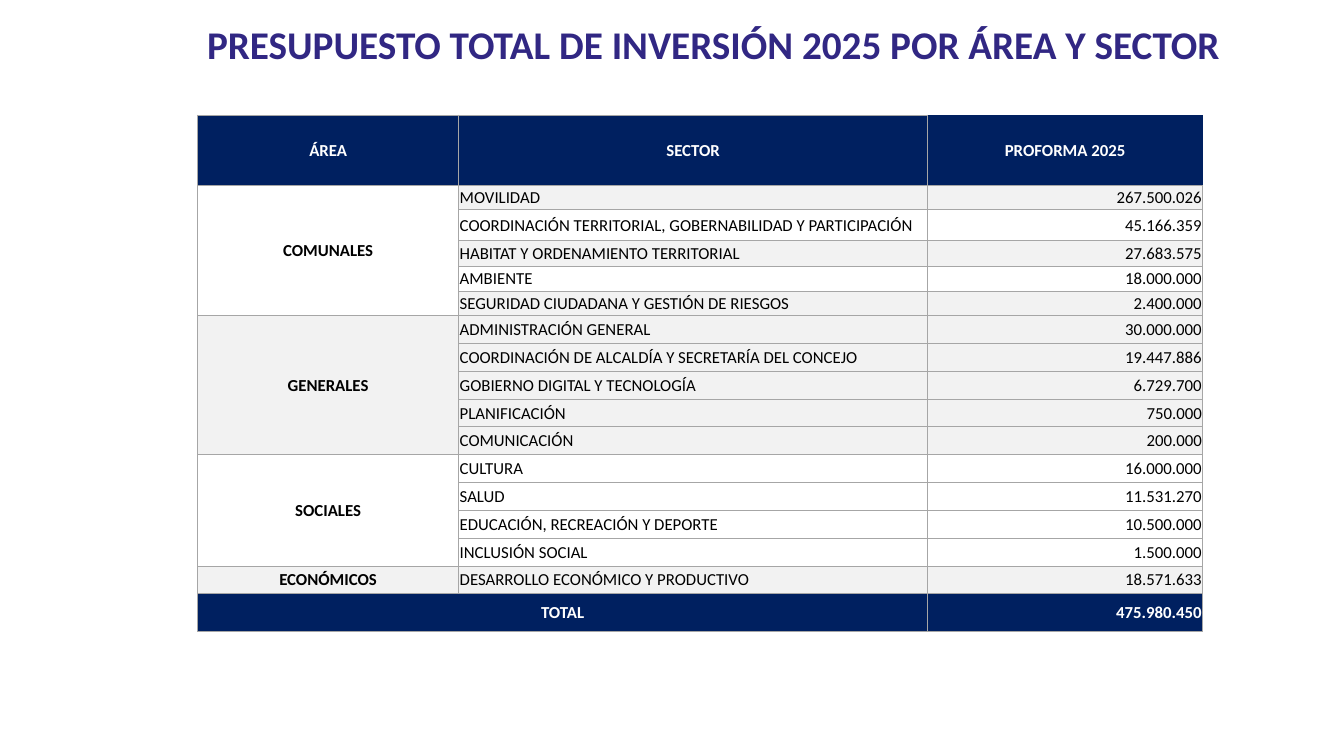
from dataclasses import dataclass

from lxml.etree import SubElement
from pptx import Presentation
from pptx.dml.color import RGBColor
from pptx.enum.text import MSO_ANCHOR, PP_ALIGN
from pptx.oxml.ns import qn
from pptx.slide import Slide
from pptx.table import Table, _Cell
from pptx.text.text import TextFrame
from pptx.util import Inches, Pt

PURPLE = RGBColor(0x31, 0x27, 0x83)
NAVY = RGBColor(0x00, 0x20, 0x60)
WHITE = RGBColor(0xFF, 0xFF, 0xFF)
BLACK = RGBColor(0x00, 0x00, 0x00)
LIGHT_GRAY = RGBColor(0xF2, 0xF2, 0xF2)
BORDER_GRAY = RGBColor(0xA6, 0xA6, 0xA6)

FONT = "Calibri"
COLUMN_WIDTHS = (2.59, 4.65, 2.73)
HEADER_HEIGHT = 0.7
TOTAL_HEIGHT = 0.37
REGULAR_HEIGHT = 2.76 / 10


@dataclass(frozen=True)
class Sector:
    name: str
    amount: str
    fill: RGBColor
    height: float = REGULAR_HEIGHT


@dataclass(frozen=True)
class Area:
    name: str
    fill: RGBColor
    sectors: tuple[Sector, ...]


AREAS = (
    Area("COMUNALES", WHITE, (
        Sector("MOVILIDAD", "267.500.026", LIGHT_GRAY, 0.24),
        Sector("COORDINACIÓN TERRITORIAL, GOBERNABILIDAD Y PARTICIPACIÓN", "45.166.359", WHITE, 0.3),
        Sector("HABITAT Y ORDENAMIENTO TERRITORIAL", "27.683.575", LIGHT_GRAY, 0.26),
        Sector("AMBIENTE", "18.000.000", WHITE, 0.25),
        Sector("SEGURIDAD CIUDADANA Y GESTIÓN DE RIESGOS", "2.400.000", LIGHT_GRAY, 0.24),
    )),
    Area("GENERALES", LIGHT_GRAY, (
        Sector("ADMINISTRACIÓN GENERAL", "30.000.000", LIGHT_GRAY),
        Sector("COORDINACIÓN DE ALCALDÍA Y SECRETARÍA DEL CONCEJO", "19.447.886", LIGHT_GRAY),
        Sector("GOBIERNO DIGITAL Y TECNOLOGÍA", "6.729.700", LIGHT_GRAY),
        Sector("PLANIFICACIÓN", "750.000", LIGHT_GRAY),
        Sector("COMUNICACIÓN", "200.000", LIGHT_GRAY),
    )),
    Area("SOCIALES", WHITE, (
        Sector("CULTURA", "16.000.000", WHITE),
        Sector("SALUD", "11.531.270", WHITE),
        Sector("EDUCACIÓN, RECREACIÓN Y DEPORTE", "10.500.000", WHITE),
        Sector("INCLUSIÓN SOCIAL", "1.500.000", WHITE),
    )),
    Area("ECONÓMICOS", LIGHT_GRAY, (
        Sector("DESARROLLO ECONÓMICO Y PRODUCTIVO", "18.571.633", LIGHT_GRAY),
    )),
)


def write_text(frame: TextFrame, text: str, *, size: float = 12, color: RGBColor = BLACK,
               bold: bool = False, align: PP_ALIGN = PP_ALIGN.LEFT, line_spacing: float = 1.0) -> None:
    para = frame.paragraphs[0]
    para.alignment = align
    para.line_spacing = line_spacing
    span = para.add_run()
    span.text = text
    span.font.name = FONT
    span.font.size = Pt(size)
    span.font.bold = bold
    span.font.color.rgb = color


def add_borders(cell: _Cell, sides: str) -> None:
    properties = cell._tc.get_or_add_tcPr()
    for side in "LRTB":
        visible = side in sides
        line = SubElement(properties, qn(f"a:ln{side}"), w=str(Pt(0.5) if visible else 0))
        if visible:
            fill = SubElement(line, qn("a:solidFill"))
            SubElement(fill, qn("a:srgbClr"), val=str(BORDER_GRAY))
        else:
            SubElement(line, qn("a:noFill"))


def style_cell(cell: _Cell, fill: RGBColor, sides: str = "LRTB") -> None:
    add_borders(cell, sides)
    cell.fill.solid()
    cell.fill.fore_color.rgb = fill
    cell.vertical_anchor = MSO_ANCHOR.MIDDLE
    cell.margin_left = cell.margin_right = cell.margin_top = Inches(0.01)
    cell.margin_bottom = 0


def add_title(page: Slide) -> None:
    box = page.shapes.add_textbox(Inches(1.31), Inches(0.01), Inches(11.53), Inches(0.91))
    box.text_frame.word_wrap = True
    box.text_frame.vertical_anchor = MSO_ANCHOR.MIDDLE
    write_text(box.text_frame, "PRESUPUESTO TOTAL DE INVERSIÓN 2025 POR ÁREA Y SECTOR",
               size=28, color=PURPLE, bold=True, align=PP_ALIGN.CENTER, line_spacing=0.9)


def fill_header(table: Table) -> None:
    headings = (("ÁREA", "LRTB"), ("SECTOR", "LRTB"), ("PROFORMA 2025", "LB"))
    for column, (heading, sides) in enumerate(headings):
        cell = table.cell(0, column)
        style_cell(cell, NAVY, sides)
        write_text(cell.text_frame, heading, color=WHITE, bold=True, align=PP_ALIGN.CENTER)


def fill_area(table: Table, area: Area, first_row: int) -> None:
    for row, sector in enumerate(area.sectors, first_row):
        area_cell, name_cell, amount_cell = (table.cell(row, column) for column in range(3))
        style_cell(area_cell, area.fill)
        style_cell(name_cell, sector.fill)
        style_cell(amount_cell, sector.fill)
        write_text(name_cell.text_frame, sector.name)
        write_text(amount_cell.text_frame, sector.amount, align=PP_ALIGN.RIGHT)
    label_cell = table.cell(first_row, 0)
    write_text(label_cell.text_frame, area.name, bold=True, align=PP_ALIGN.CENTER)
    if len(area.sectors) > 1:
        label_cell.merge(table.cell(first_row + len(area.sectors) - 1, 0))


def fill_total(table: Table, row: int) -> None:
    label_cell, hidden_cell, amount_cell = (table.cell(row, column) for column in range(3))
    for cell in (label_cell, hidden_cell, amount_cell):
        style_cell(cell, NAVY)
    label_cell.merge(hidden_cell)
    write_text(label_cell.text_frame, "TOTAL", color=WHITE, bold=True, align=PP_ALIGN.CENTER)
    write_text(amount_cell.text_frame, "475.980.450", color=WHITE, bold=True, align=PP_ALIGN.RIGHT)


def add_budget_table(page: Slide) -> None:
    sector_heights = [sector.height for area in AREAS for sector in area.sectors]
    heights = [HEADER_HEIGHT, *sector_heights, TOTAL_HEIGHT]
    table = page.shapes.add_table(len(heights), len(COLUMN_WIDTHS), Inches(1.96), Inches(1.14),
                                  Inches(sum(COLUMN_WIDTHS)), Inches(sum(heights))).table
    table.horz_banding = False
    for column, width in zip(table.columns, COLUMN_WIDTHS):
        column.width = Inches(width)
    for row, height in zip(table.rows, heights):
        row.height = Inches(height)
    fill_header(table)
    first_row = 1
    for area in AREAS:
        fill_area(table, area, first_row)
        first_row += len(area.sectors)
    fill_total(table, first_row)


def main() -> None:
    deck = Presentation()
    deck.slide_width = Inches(13.33)
    deck.slide_height = Inches(7.5)
    page = deck.slides.add_slide(deck.slide_layouts[6])
    add_title(page)
    add_budget_table(page)
    deck.save("out.pptx")


if __name__ == "__main__":
    main()
